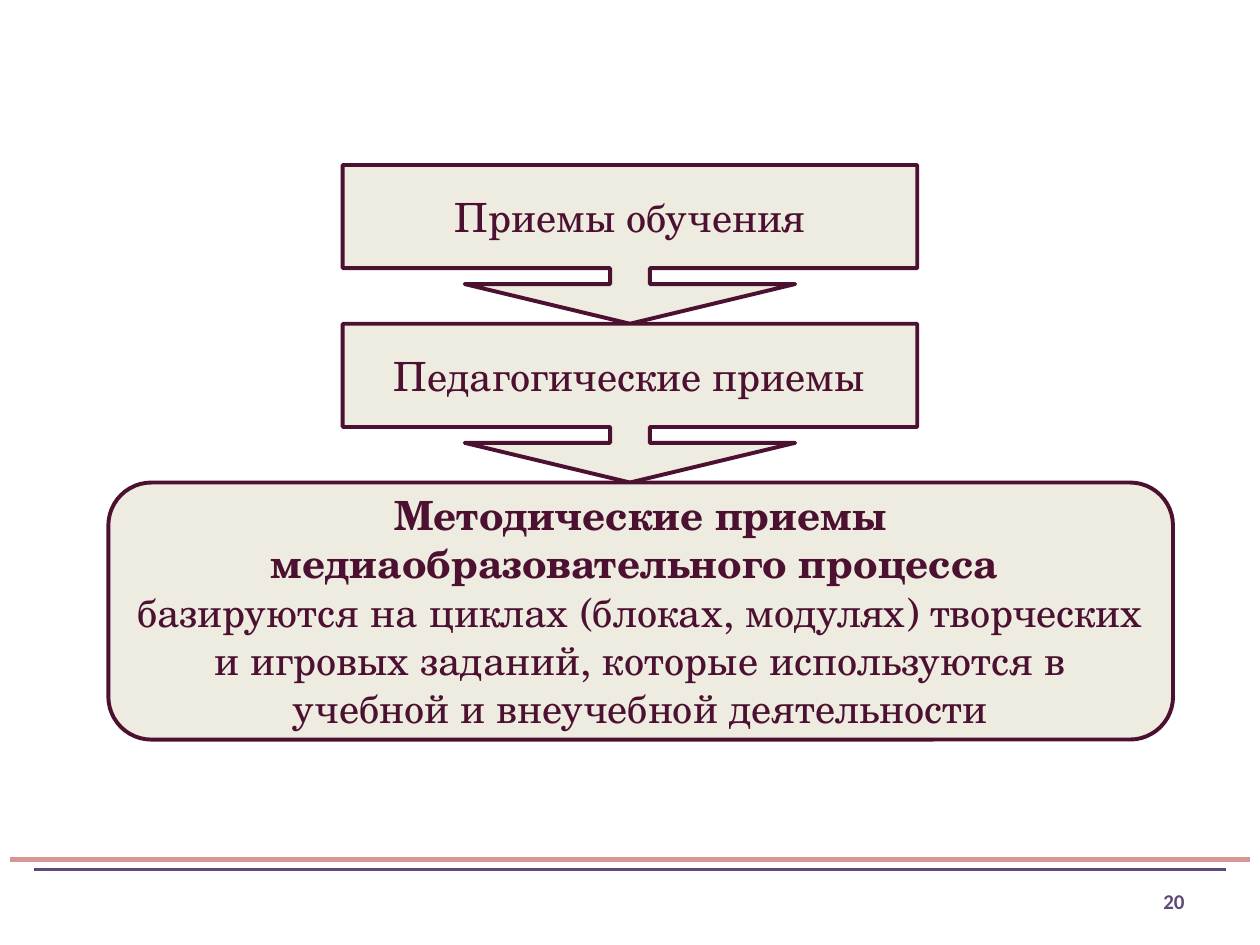
from lxml.etree import SubElement
from pptx import Presentation
from pptx.dml.color import RGBColor
from pptx.enum.shapes import MSO_CONNECTOR as Connector, MSO_SHAPE as Shape
from pptx.enum.text import MSO_ANCHOR as Anchor, PP_ALIGN as Align
from pptx.oxml.ns import qn
from pptx.util import Inches, Pt

PLUM = RGBColor(0x4C, 0x11, 0x30)
CREAM = RGBColor(0xEE, 0xEC, 0xE1)
ROSE = RGBColor(0xD9, 0x95, 0x93)
VIOLET = RGBColor(0x5F, 0x49, 0x7A)

WIDTH, HEIGHT = Inches(10), Inches(7.5)
STEP_TOP, STEP_HEIGHT = Inches(1.31), Inches(1.26)

STEPS = ["Приемы обучения", "Педагогические приемы"]
RESULT = [
    ("Методические приемы медиаобразовательного процесса ", True),
    ("базируются на циклах (блоках, модулях) творческих и игровых заданий, "
     "которые используются в учебной и внеучебной деятельности", False),
]
PAGE_NUMBER = "20"
FOOTER_RULES = [(0.08, 6.82, ROSE, 3), (0.27, 6.9, VIOLET, 2)]

BODY_FONT = {"name": "TeX Gyre Schola", "size": Pt(23)}
NUMBER_FONT = {"name": "Calibri", "size": Pt(12)}
BOX_FRAME = {
    "word_wrap": True,
    "vertical_anchor": Anchor.MIDDLE,
    "margin_left": Inches(0.1),
    "margin_right": Inches(0.1),
    "margin_top": Inches(0.1),
    "margin_bottom": Inches(0.1),
}
NUMBER_FRAME = BOX_FRAME | {"margin_top": Inches(0.05), "margin_bottom": Inches(0.05)}


def apply(target, values):
    for key, value in values.items():
        setattr(target, key, value)


def write(frame, paragraphs, layout, font, color, align):
    apply(frame, layout)
    for index, (wording, bold) in enumerate(paragraphs):
        paragraph = frame.add_paragraph() if index else frame.paragraphs[0]
        paragraph.alignment = align
        run = paragraph.add_run()
        run.text = wording
        apply(run.font, font | {"bold": bold})
        run.font.color.rgb = color


def add_box(slide, preset, place, adjustments, paragraphs):
    box = slide.shapes.add_shape(preset, *place)
    box.shadow.inherit = False
    for index, value in enumerate(adjustments):
        box.adjustments[index] = value
    box.fill.solid()
    box.fill.fore_color.rgb = CREAM
    box.line.color.rgb = PLUM
    box.line.width = Pt(2.25)
    write(box.text_frame, paragraphs, BOX_FRAME, BODY_FONT, PLUM, Align.CENTER)


def add_rule(slide, inset, height, color, weight):
    left, top = Inches(inset), Inches(height)
    rule = slide.shapes.add_connector(Connector.STRAIGHT, left, top, WIDTH - left, top)
    rule.line.color.rgb = color
    rule.line.width = Pt(weight)
    SubElement(rule._element.spPr, qn("a:effectLst"))


def main():
    deck = Presentation()
    deck.slide_width, deck.slide_height = WIDTH, HEIGHT
    slide = deck.slides.add_slide(deck.slide_layouts[6])

    for rule in FOOTER_RULES:
        add_rule(slide, *rule)

    number = slide.shapes.add_textbox(
        Inches(8.86), Inches(6.95), Inches(0.64), Inches(0.4))
    write(number.text_frame, [(PAGE_NUMBER, True)], NUMBER_FRAME,
          NUMBER_FONT, VIOLET, Align.RIGHT)

    step_width = Inches(4.56)
    step_left = (WIDTH - step_width) // 2
    for row, step in enumerate(STEPS):
        place = (step_left, STEP_TOP + row * STEP_HEIGHT, step_width, STEP_HEIGHT)
        add_box(slide, Shape.DOWN_ARROW_CALLOUT, place,
                (0.25, 1.041, 0.25, 0.65), [(step, False)])

    result_top = STEP_TOP + len(STEPS) * STEP_HEIGHT
    add_box(slide, Shape.ROUNDED_RECTANGLE,
            (Inches(0.86), result_top, Inches(8.45), Inches(2.04)),
            (0.167,), RESULT)

    deck.save("out.pptx")


if __name__ == "__main__":
    main()
